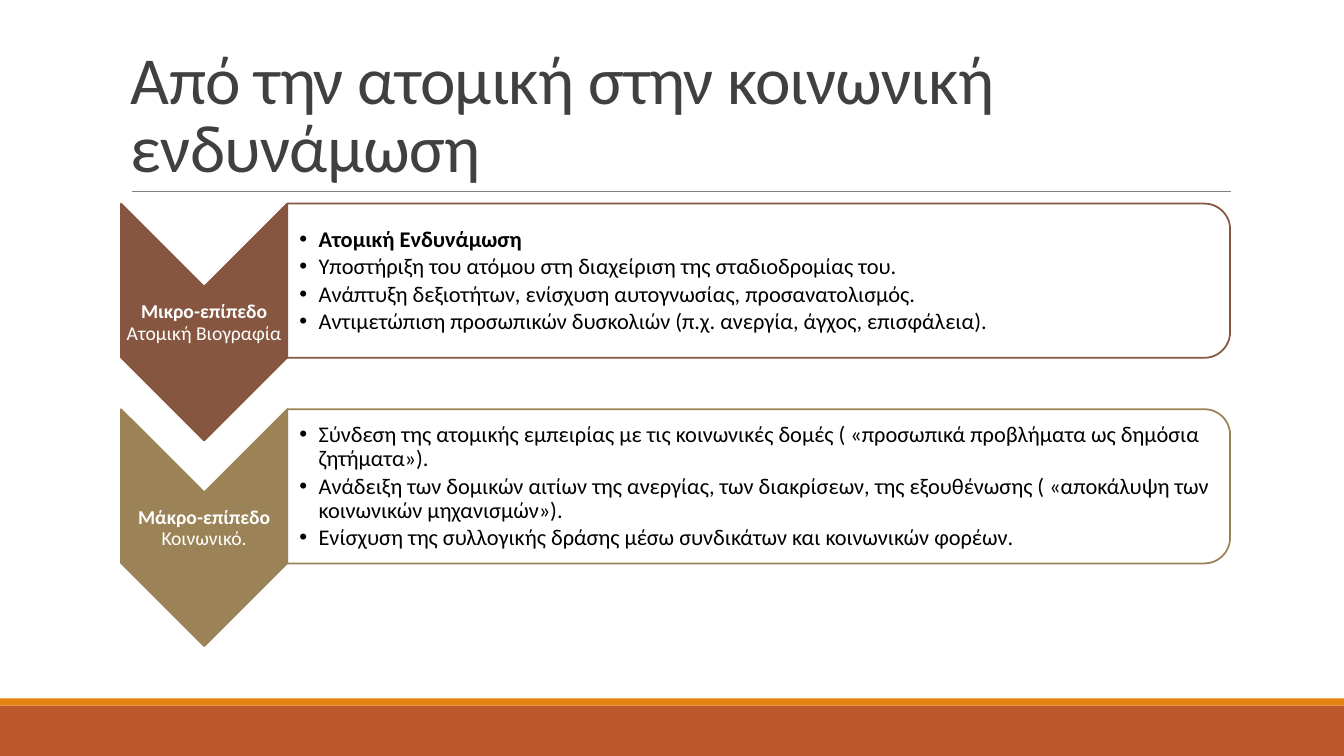
from dataclasses import dataclass

from lxml import etree
from pptx import Presentation
from pptx.dml.color import RGBColor
from pptx.enum.shapes import MSO_CONNECTOR, MSO_SHAPE
from pptx.enum.text import MSO_ANCHOR, PP_ALIGN
from pptx.oxml.ns import qn
from pptx.util import Inches, Pt


@dataclass(frozen=True)
class Theme:
    font: str = "Calibri"
    title_size: int = 48
    label_size: int = 14
    point_size: int = 16
    title: str = "404040"
    rule: str = "808080"
    band: str = "BD582C"
    stripe: str = "E48312"
    micro: str = "865640"
    macro: str = "9B8357"
    light: str = "FFFFFF"
    dark: str = "000000"


THEME = Theme()
PANEL_OPACITY = 90

LEVELS = [
    (THEME.micro, "Μικρο-επίπεδο", "Ατομική Βιογραφία", [
        ("Ατομική Ενδυνάμωση", True),
        ("Υποστήριξη του ατόμου στη διαχείριση της σταδιοδρομίας του.", False),
        ("Ανάπτυξη δεξιοτήτων, ενίσχυση αυτογνωσίας, προσανατολισμός.", False),
        ("Αντιμετώπιση προσωπικών δυσκολιών (π.χ. ανεργία, άγχος, επισφάλεια).", False),
    ]),
    (THEME.macro, "Μάκρο-επίπεδο", "Κοινωνικό.", [
        ("Σύνδεση της ατομικής εμπειρίας με τις κοινωνικές δομές "
         "( «προσωπικά προβλήματα ως δημόσια ζητήματα»).", False),
        ("Ανάδειξη των δομικών αιτίων της ανεργίας, των διακρίσεων, της εξουθένωσης "
         "( «αποκάλυψη των κοινωνικών μηχανισμών»).", False),
        ("Ενίσχυση της συλλογικής δράσης μέσω συνδικάτων και κοινωνικών φορέων.", False),
    ]),
]


def add_bullet(paragraph, indent):
    properties = paragraph._p.get_or_add_pPr()
    properties.set("marL", str(Inches(indent)))
    properties.set("indent", str(-Inches(indent)))
    etree.SubElement(properties, qn("a:buFont")).set("typeface", "Arial")
    etree.SubElement(properties, qn("a:buChar")).set("char", "•")


def write_text(frame, paragraphs, *, size, color, align=PP_ALIGN.LEFT, anchor=MSO_ANCHOR.MIDDLE,
               insets=(0.01, 0.01, 0.01, 0.01), line_spacing=0.9, space_after=0,
               bullet_indent=None, tracking=None):
    """Fill a frame; each paragraph is a list of (text, bold) runs."""
    frame.word_wrap = True
    frame.vertical_anchor = anchor
    frame.margin_left, frame.margin_top, frame.margin_right, frame.margin_bottom = map(Inches, insets)
    for number, runs in enumerate(paragraphs):
        paragraph = frame.add_paragraph() if number else frame.paragraphs[0]
        paragraph.alignment = align
        paragraph.line_spacing = line_spacing
        paragraph.space_after = Pt(space_after)
        if bullet_indent:
            add_bullet(paragraph, bullet_indent)
        for text, bold in runs:
            run = paragraph.add_run()
            run.text = text
            run.font.name = THEME.font
            run.font.size = Pt(size)
            run.font.bold = bold
            run.font.color.rgb = RGBColor.from_string(color)
            if tracking:
                run._r.get_or_add_rPr().set("spc", str(round(tracking * 100)))


class SlideBuilder:
    def __init__(self, slide, theme):
        self.slide = slide
        self.theme = theme

    def shape(self, kind, left, top, width, height, fill, line=None, opacity=None, turned=False):
        """Place a shape by its visible bounds; turned rotates it by a quarter."""
        if turned:
            left, top = left + (width - height) / 2, top + (height - width) / 2
            width, height = height, width
        shape = self.slide.shapes.add_shape(kind, *map(Inches, (left, top, width, height)))
        shape.shadow.inherit = False
        shape.rotation = 90 if turned else 0
        shape.fill.solid()
        shape.fill.fore_color.rgb = RGBColor.from_string(fill)
        if opacity:
            color = shape.fill._xPr.find(".//" + qn("a:srgbClr"))
            etree.SubElement(color, qn("a:alpha")).set("val", str(opacity * 1000))
        if line:
            shape.line.color.rgb = RGBColor.from_string(line)
            shape.line.width = Pt(1.25)
        else:
            shape.line.fill.background()

    def rule(self, left, right, y):
        rule = self.slide.shapes.add_connector(
            MSO_CONNECTOR.STRAIGHT, *map(Inches, (left, y, right, y)))
        rule.line.color.rgb = RGBColor.from_string(self.theme.rule)
        rule.line.width = Pt(0.5)
        etree.SubElement(rule._element.spPr, qn("a:effectLst"))

    def text(self, left, top, width, height, paragraphs, **style):
        box = self.slide.shapes.add_textbox(*map(Inches, (left, top, width, height)))
        write_text(box.text_frame, paragraphs, **style)

    def level(self, top, color, name, scope, points):
        """Draw a downward chevron with its label and the panel of points beside it."""
        theme = self.theme
        self.shape(MSO_SHAPE.CHEVRON, 1.2, top, 1.65, 2.35, color, line=color, turned=True)
        self.text(1.2, top + 0.83, 1.65, 0.71, [[(name, True), (" " + scope, False)]],
                  size=theme.label_size, color=theme.light, align=PP_ALIGN.CENTER)
        self.shape(MSO_SHAPE.ROUND_2_SAME_RECTANGLE, 2.85, top, 9.35, 1.53, theme.light,
                   line=color, opacity=PANEL_OPACITY, turned=True)
        self.text(2.85, top + 0.08, 9.28, 1.38, [[point] for point in points],
                  size=theme.point_size, color=theme.dark, insets=(0.12, 0.01, 0.01, 0.01),
                  space_after=2.4, bullet_indent=0.19)


def main():
    presentation = Presentation()
    presentation.slide_width = Inches(13.33)
    presentation.slide_height = Inches(7.5)
    slide = presentation.slides.add_slide(presentation.slide_layouts[6])
    builder = SlideBuilder(slide, THEME)

    builder.shape(MSO_SHAPE.RECTANGLE, 0, 7, 13.33, 0.5, THEME.band)
    builder.shape(MSO_SHAPE.RECTANGLE, 0, 6.93, 13.33, 0.07, THEME.stripe)
    builder.rule(1.31, 12.21, 1.9)
    builder.text(1.2, 0.31, 11, 1.59, [[("Από την ατομική στην κοινωνική ενδυνάμωση", False)]],
                 size=THEME.title_size, color=THEME.title, anchor=MSO_ANCHOR.BOTTOM,
                 insets=(0.1, 0.05, 0.1, 0.05), line_spacing=0.85, tracking=-0.5)
    for row, level in enumerate(LEVELS):
        builder.level(2.02 + row * 2.04, *level)

    presentation.save("out.pptx")


if __name__ == "__main__":
    main()
